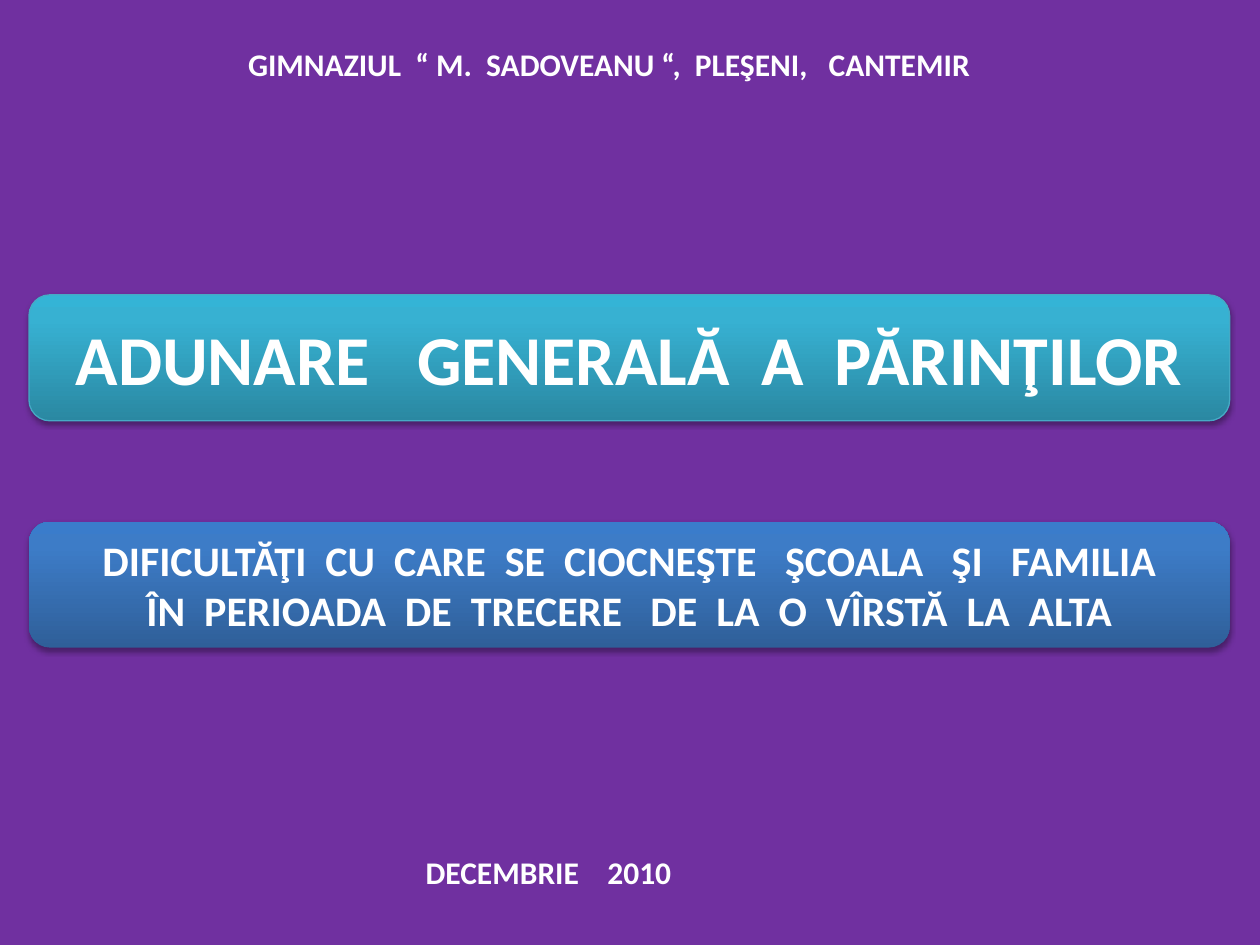
from lxml.etree import SubElement
from pptx import Presentation
from pptx.dml.color import RGBColor
from pptx.enum.shapes import MSO_SHAPE
from pptx.enum.text import MSO_ANCHOR, PP_ALIGN
from pptx.oxml.ns import qn
from pptx.util import Inches, Pt

BACKGROUND = "7030A0"
WHITE = "FFFFFF"
BANNERS = [
    {
        "lines": ["ADUNARE   GENERALĂ  A  PĂRINŢILOR"],
        "top": 2.34, "size": 40, "outline": "46AAC5",
        "stops": [(0, "2A88A2"), (80, "37B1D2"), (100, "34B4D6")],
    },
    {
        "lines": [
            "DIFICULTĂŢI  CU  CARE  SE  CIOCNEŞTE   ŞCOALA   ŞI   FAMILIA",
            "ÎN  PERIOADA  DE  TRECERE   DE  LA  O  VÎRSTĂ  LA  ALTA",
        ],
        "top": 4.14, "size": 24, "outline": None,
        "stops": [(0, "2F5F99"), (80, "3D7CC7"), (100, "3A7CCB")],
    },
]
LABELS = [
    ("GIMNAZIUL  “ M.  SADOVEANU “,  PLEŞENI,   CANTEMIR", 1.87, 0.31, 6.48),
    ("DECEMBRIE    2010", 3.28, 6.72, 2.34),
]


def set_color(color_format, value):
    """Give a colour format a hex colour."""
    color_format.rgb = RGBColor.from_string(value)


def write_lines(frame, lines, size, alignment):
    """Fill a text frame with bold white paragraphs."""
    frame.text = "\n".join(lines)
    for paragraph in frame.paragraphs:
        paragraph.alignment = alignment
        font = paragraph.font
        font.name, font.size, font.bold = "Calibri", Pt(size), True
        set_color(font.color, WHITE)


def add_color(parent, value):
    """Append a solid colour element and return it."""
    return SubElement(parent, qn("a:srgbClr"), val=value)


def set_gradient(shape, stops):
    """Fill a shape with a gradient rising from the bottom."""
    shape.fill.gradient()
    shape.fill.gradient_angle = 90
    stop_list = shape._element.spPr.find(".//" + qn("a:gsLst"))
    for stop in list(stop_list):
        stop_list.remove(stop)
    for percent, value in stops:
        add_color(SubElement(stop_list, qn("a:gs"), pos=str(percent * 1000)), value)


def set_shadow(shape):
    """Give a shape a soft shadow below it."""
    shape.shadow.inherit = False
    effects = shape._element.spPr.find(qn("a:effectLst"))
    shadow = SubElement(effects, qn("a:outerShdw"), blurRad=str(Pt(3.1)),
                        dist=str(Pt(1.8)), dir="5400000", rotWithShape="0")
    SubElement(add_color(shadow, "000000"), qn("a:alpha"), val="35000")


def add_banner(slide, banner):
    """Add a rounded gradient banner with centred text."""
    shape = slide.shapes.add_shape(MSO_SHAPE.ROUNDED_RECTANGLE, Inches(0.23),
                                   Inches(banner["top"]), Inches(9.53), Inches(1))
    set_gradient(shape, banner["stops"])
    if banner["outline"]:
        set_color(shape.line.color, banner["outline"])
        shape.line.width = Pt(0.75)
    else:
        shape.line.fill.background()
    set_shadow(shape)
    shape.text_frame.vertical_anchor = MSO_ANCHOR.MIDDLE
    write_lines(shape.text_frame, banner["lines"], banner["size"], PP_ALIGN.CENTER)


def add_label(slide, text, left, top, width):
    """Add a single-line text box."""
    box = slide.shapes.add_textbox(Inches(left), Inches(top), Inches(width), Inches(0.4))
    box.text_frame.word_wrap = True
    write_lines(box.text_frame, [text], 18, PP_ALIGN.LEFT)


def main():
    """Build the slide and save it."""
    presentation = Presentation()
    presentation.slide_width, presentation.slide_height = Inches(10), Inches(7.5)
    slide = presentation.slides.add_slide(presentation.slide_layouts[6])
    slide.background.fill.solid()
    set_color(slide.background.fill.fore_color, BACKGROUND)
    for banner in BANNERS:
        add_banner(slide, banner)
    for label in LABELS:
        add_label(slide, *label)
    presentation.save("out.pptx")


if __name__ == "__main__":
    main()
